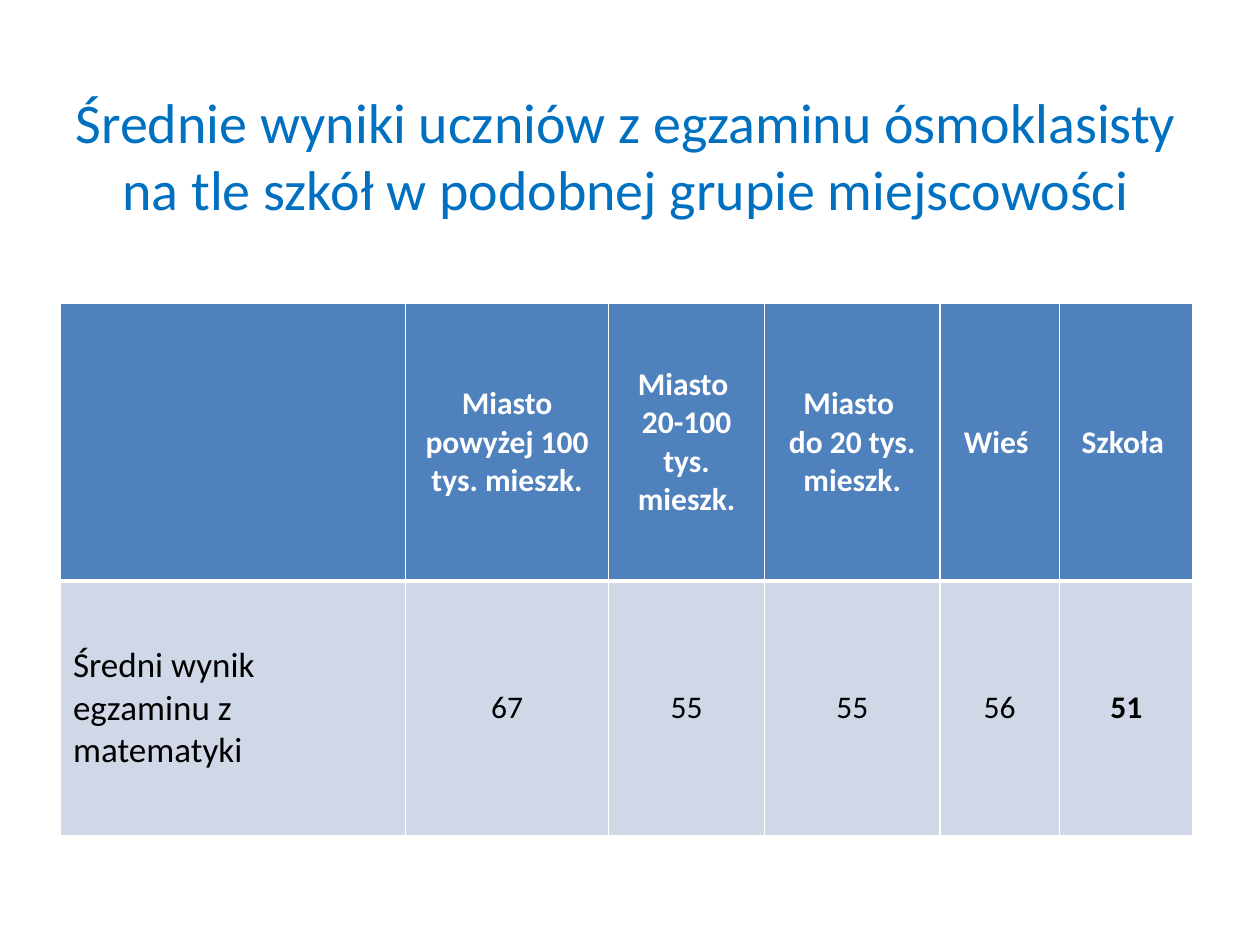
from dataclasses import dataclass

from lxml import etree
from pptx import Presentation
from pptx.dml.color import RGBColor
from pptx.enum.text import MSO_ANCHOR, PP_ALIGN
from pptx.oxml.ns import qn
from pptx.util import Inches, Pt

MID = MSO_ANCHOR.MIDDLE
LEFT, CENTER = PP_ALIGN.LEFT, PP_ALIGN.CENTER
WIDE, HIGH = Inches(10), Inches(7.5)


@dataclass(frozen=True)
class Theme:
    font: str = "Calibri"
    title: str = "0070C0"
    head: str = "4F81BD"
    body: str = "D0D8E8"
    light: str = "FFFFFF"
    dark: str = "000000"
    title_size: int = 32
    label_size: int = 20
    cell_size: int = 18
    thin: int = 1
    thick: int = 3


@dataclass(frozen=True)
class Entry:
    text: str
    fill: str
    color: str
    size: int
    bold: bool = False
    align: PP_ALIGN = CENTER


THEME = Theme()
COLS = (2.74, 1.61, 1.24, 1.39, 0.95, 1.06)
ROWS = (2.2, 2.02)
HEADS = ("", "Miasto powyżej 100 tys. mieszk.", "Miasto \n20-100 tys. mieszk.",
         "Miasto \ndo 20 tys. mieszk.", "Wieś ", "Szkoła ")
LABEL = "Średni wynik egzaminu z matematyki"
SCORES = (67, 55, 55, 56, 51)


def write(frame, text: str, color: str, size: int, bold: bool, align) -> None:
    """Put one styled paragraph in a text frame."""
    para = frame.paragraphs[0]
    para.text = text
    para.alignment = align
    style = {"name": THEME.font, "size": Pt(size), "bold": bold}
    for run in para.runs:
        for key, value in style.items():
            setattr(run.font, key, value)
        run.font.color.rgb = RGBColor.from_string(color)


def edge(cell, widths: dict[str, int]) -> None:
    """Draw the cell's borders, ahead of its fill in the XML order."""
    props = cell._tc.get_or_add_tcPr()
    for spot, (side, width) in enumerate(widths.items()):
        line = etree.Element(qn(f"a:ln{side}"), w=str(Pt(width)))
        fill = etree.SubElement(line, qn("a:solidFill"))
        etree.SubElement(fill, qn("a:srgbClr"), val=THEME.light)
        props.insert(spot, line)


def draw_cell(cell, entry: Entry, sides: dict[str, int]) -> None:
    cell.vertical_anchor = MID
    cell.fill.solid()
    cell.fill.fore_color.rgb = RGBColor.from_string(entry.fill)
    if entry.text:
        write(cell.text_frame, entry.text, entry.color, entry.size,
              entry.bold, entry.align)
    edge(cell, sides)


def draw_table(slide, grid: list[list[Entry]]) -> None:
    frame = slide.shapes.add_table(
        len(ROWS), len(COLS), int(WIDE * 0.048), int(HIGH * 0.3213),
        Inches(sum(COLS)), Inches(sum(ROWS)))
    table = frame.table
    for col, width in zip(table.columns, COLS):
        col.width = Inches(width)
    for row, height in zip(table.rows, ROWS):
        row.height = Inches(height)
    for r, line in enumerate(grid):
        # The rule under the header is shared by both rows
        sides = dict.fromkeys("LRTB", THEME.thin)
        sides["T" if r else "B"] = THEME.thick
        for c, entry in enumerate(line):
            draw_cell(table.cell(r, c), entry, sides)


def draw_title(slide) -> None:
    title = slide.shapes.title
    place = {"left": int(WIDE * 0.047), "top": int(HIGH * 0.08),
             "width": int(WIDE * 0.9), "height": int(HIGH / 6)}
    for key, value in place.items():
        setattr(title, key, value)
    title.text_frame.vertical_anchor = MID
    write(title.text_frame,
          "Średnie wyniki uczniów z egzaminu ósmoklasisty "
          "na tle szkół w podobnej grupie miejscowości",
          THEME.title, THEME.title_size, False, CENTER)


def main() -> None:
    deck = Presentation()
    deck.slide_width, deck.slide_height = WIDE, HIGH
    slide = deck.slides.add_slide(deck.slide_layouts[5])
    draw_title(slide)

    # Header row, then the label and scores with the school's own in bold
    head = [Entry(text, THEME.head, THEME.light, THEME.cell_size, True)
            for text in HEADS]
    label = Entry(LABEL, THEME.body, THEME.dark, THEME.label_size, align=LEFT)
    last = len(SCORES) - 1
    marks = [Entry(str(score), THEME.body, THEME.dark, THEME.cell_size,
                   spot == last) for spot, score in enumerate(SCORES)]
    draw_table(slide, [head, [label, *marks]])
    deck.save("out.pptx")


if __name__ == "__main__":
    main()
